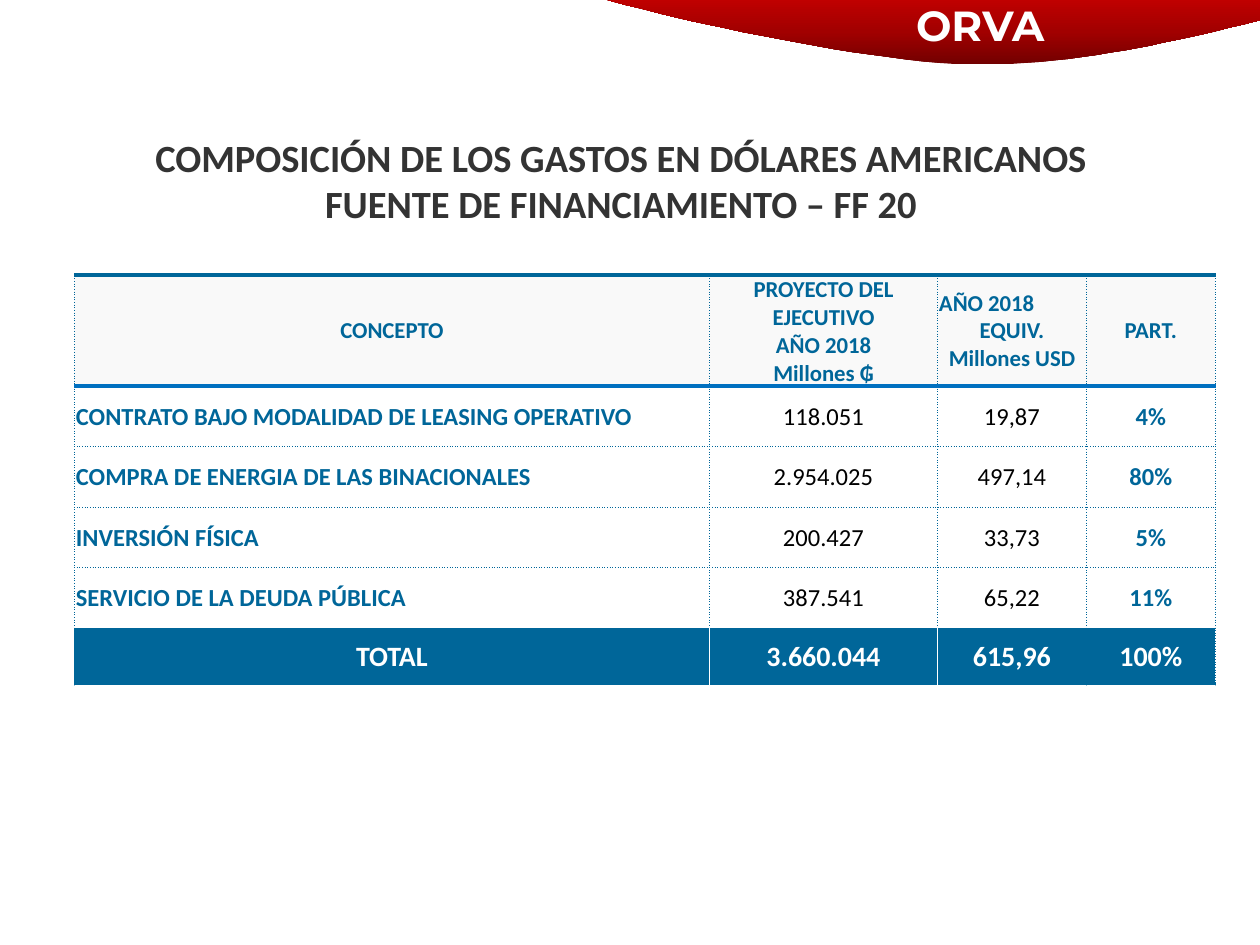
import copy

import pptx
import pptx.dml.color
import pptx.enum.text
import pptx.oxml
import pptx.oxml.ns
import pptx.util

Cm = pptx.util.Cm
Pt = pptx.util.Pt
RGBColor = pptx.dml.color.RGBColor
PP_ALIGN = pptx.enum.text.PP_ALIGN
MIDDLE = pptx.enum.text.MSO_ANCHOR.MIDDLE

TEAL = RGBColor(0x00, 0x66, 0x99)
BLUE = RGBColor(0x00, 0x70, 0xC0)
GREY = RGBColor(0xF9, 0xF9, 0xF9)
DARK = RGBColor(0x33, 0x33, 0x33)
BLACK = RGBColor(0x00, 0x00, 0x00)
WHITE = RGBColor(0xFF, 0xFF, 0xFF)
DEEP_RED = RGBColor(0x72, 0x00, 0x00)
MID_RED = RGBColor(0xA2, 0x00, 0x00)
RED = RGBColor(0xC0, 0x00, 0x00)


def format_text(tf, size, color, bold=True, font="Calibri", align=PP_ALIGN.CENTER):
    tf.word_wrap = True
    tf.vertical_anchor = MIDDLE
    for p in tf.paragraphs:
        p.alignment = align
        for r in p.runs:
            r.font.name = font
            r.font.size = Pt(size)
            r.font.bold = bold
            r.font.color.rgb = color


def add_border(cell, side, color, width, dash):
    cell._tc.get_or_add_tcPr().append(pptx.oxml.parse_xml(
        f'<a:ln{side} {pptx.oxml.ns.nsdecls("a")} w="{Pt(width)}">'
        f'<a:solidFill><a:srgbClr val="{color}"/></a:solidFill>'
        f'<a:prstDash val="{dash}"/></a:ln{side}>'))


prs = pptx.Presentation()
prs.slide_width = Cm(25.4)
prs.slide_height = Cm(19.05)
s = prs.slides.add_slide(prs.slide_layouts[6])

# Red curved banner: Bezier curves sampled in hundredths of a centimetre
start = (1217, -3)
curves = [((1293, 23), (1732, 124), (1953, 130)),
          ((2174, 137), (2441, 64), (2540, 41))]
steps = 24
points = []
p0 = start
for p1, p2, p3 in curves:
    for i in range(1, steps + 1):
        t = i / steps
        points.append(tuple(
            (1 - t) ** 3 * a + 3 * (1 - t) ** 2 * t * b + 3 * (1 - t) * t ** 2 * c + t ** 3 * d
            for a, b, c, d in zip(p0, p1, p2, p3)))
    p0 = p3
points.append((2540, 0))
fb = s.shapes.build_freeform(*start, scale=Cm(0.01))
fb.add_line_segments(points, close=True)
sp = fb.convert_to_shape()
sp.shadow.inherit = False
sp.line.fill.background()
sp.fill.gradient()
sp.fill.gradient_angle = 90
first = sp.fill.gradient_stops[0]._gs
first.addnext(copy.deepcopy(first))
for stop, pos, color in zip(sp.fill.gradient_stops, (0, 0.5, 1), (DEEP_RED, MID_RED, RED)):
    stop.position = pos
    stop.color.rgb = color

# Banner name
sp = s.shapes.add_textbox(Cm(18.11), Cm(-0.13), Cm(3.3), Cm(1.27))
sp.text_frame.text = "ORVA"
format_text(sp.text_frame, 24, WHITE, font="Montserrat")

# Title
sp = s.shapes.add_textbox(Cm(1.09), Cm(2.72), Cm(22.86), Cm(1.83))
sp.text_frame.text = ("COMPOSICIÓN DE LOS GASTOS EN DÓLARES AMERICANOS\v"
                      "FUENTE DE FINANCIAMIENTO – FF 20")
format_text(sp.text_frame, 22, DARK)

# Expense table
rows = [
    ("CONCEPTO", "PROYECTO DEL EJECUTIVO\nAÑO 2018\nMillones ₲",
     "AÑO 2018\nEQUIV.\nMillones USD", "PART."),
    ("CONTRATO BAJO MODALIDAD DE LEASING OPERATIVO", "118.051", "19,87", "4%"),
    ("COMPRA DE ENERGIA DE LAS BINACIONALES", "2.954.025", "497,14", "80%"),
    ("INVERSIÓN FÍSICA", "200.427", "33,73", "5%"),
    ("SERVICIO DE LA DEUDA PÚBLICA", "387.541", "65,22", "11%"),
    ("TOTAL", "3.660.044", "615,96", "100%"),
]
widths = [12.8, 4.6, 3.0, 2.6]
heights = [2.24] + [1.22] * 4 + [1.12]
last = len(rows) - 1
table = s.shapes.add_table(len(rows), len(widths), Cm(1.5), Cm(5.54),
                           Cm(sum(widths)), Cm(sum(heights))).table
table.first_row = False
table.horz_banding = False
for col, width in zip(table.columns, widths):
    col.width = Cm(width)
for row, height in zip(table.rows, heights):
    row.height = Cm(height)

dotted = (TEAL, 0.5, "sysDot")
outer = (TEAL, 0.25, "sysDot")
white = (WHITE, 1, "solid")
thick = (TEAL, 2.25, "solid")
header_rule = (BLUE, 2.25, "solid")

for i, values in enumerate(rows):
    for j, value in enumerate(values):
        cell = table.cell(i, j)
        cell.text = value
        cell.margin_left = cell.margin_right = cell.margin_top = Cm(0.03)
        cell.margin_bottom = 0
        cell.vertical_anchor = MIDDLE

        # Text and fill by kind of row
        align, bold = PP_ALIGN.CENTER, True
        if i == 0:
            size, color, fill = 13, TEAL, GREY
        elif i == last:
            size, color, fill = 16, WHITE, TEAL
        else:
            size, fill = 14, None
            bold = j in (0, 3)
            color = TEAL if bold else BLACK
            if j == 0:
                align = PP_ALIGN.LEFT
        for p in cell.text_frame.paragraphs:
            p.alignment = align
            for r in p.runs:
                r.font.name = "Calibri"
                r.font.size = Pt(size)
                r.font.bold = bold
                r.font.color.rgb = color

        # Borders
        inner = [white if i == last and edge in (1, 2) else dotted for edge in (j, j + 1)]
        left = outer if j == 0 else inner[0]
        right = outer if j == len(widths) - 1 else inner[1]
        top = {0: thick, 1: header_rule}.get(i, dotted)
        bottom = {0: header_rule, last: thick}.get(i, dotted)
        for side, style in zip("LRTB", (left, right, top, bottom)):
            add_border(cell, side, *style)
        if fill is None:
            cell.fill.background()
        else:
            cell.fill.solid()
            cell.fill.fore_color.rgb = fill

# The year in the dollar heading sits at the left edge
p = table.cell(0, 2).text_frame.paragraphs[0]
p.alignment = PP_ALIGN.LEFT

prs.save("out.pptx")
